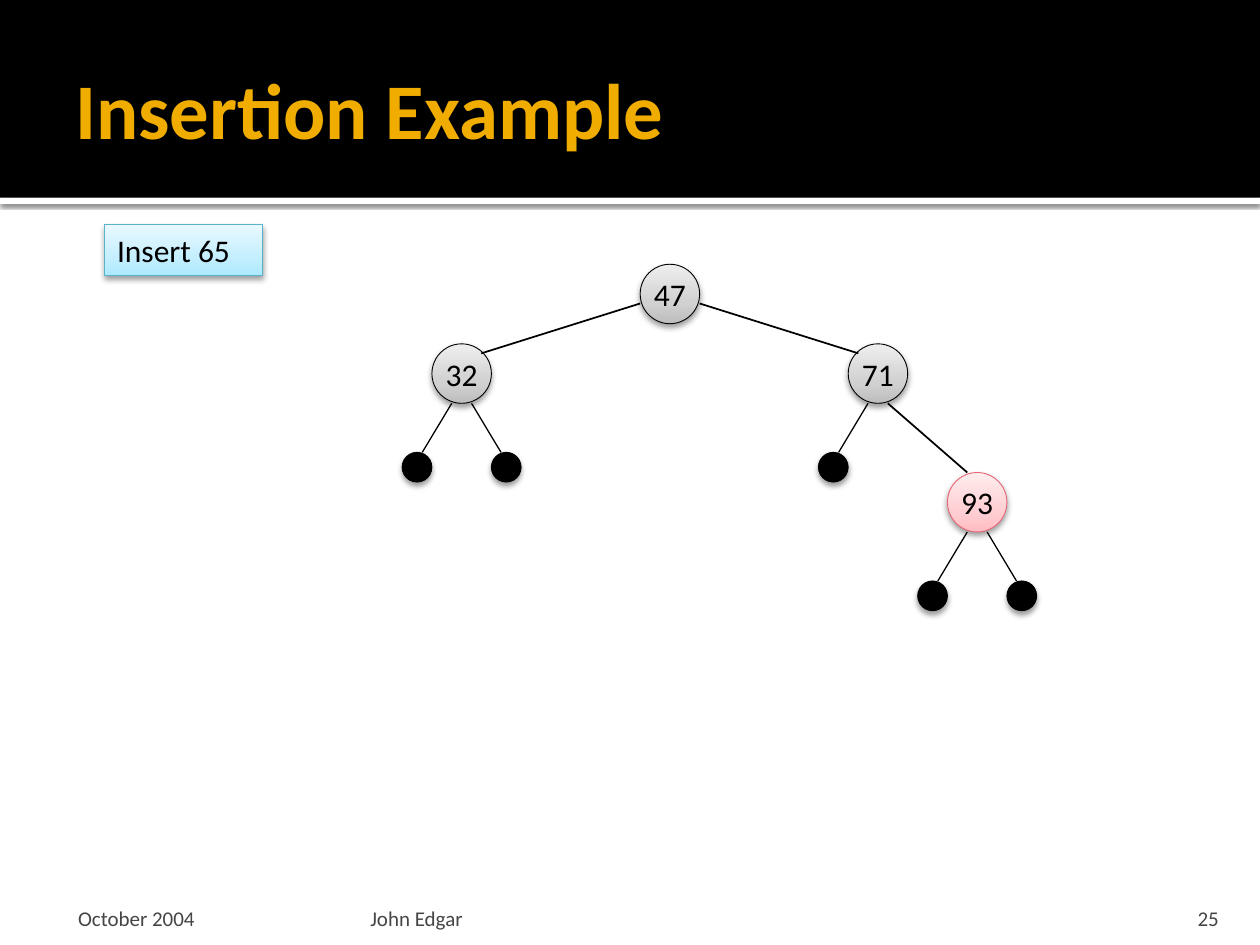
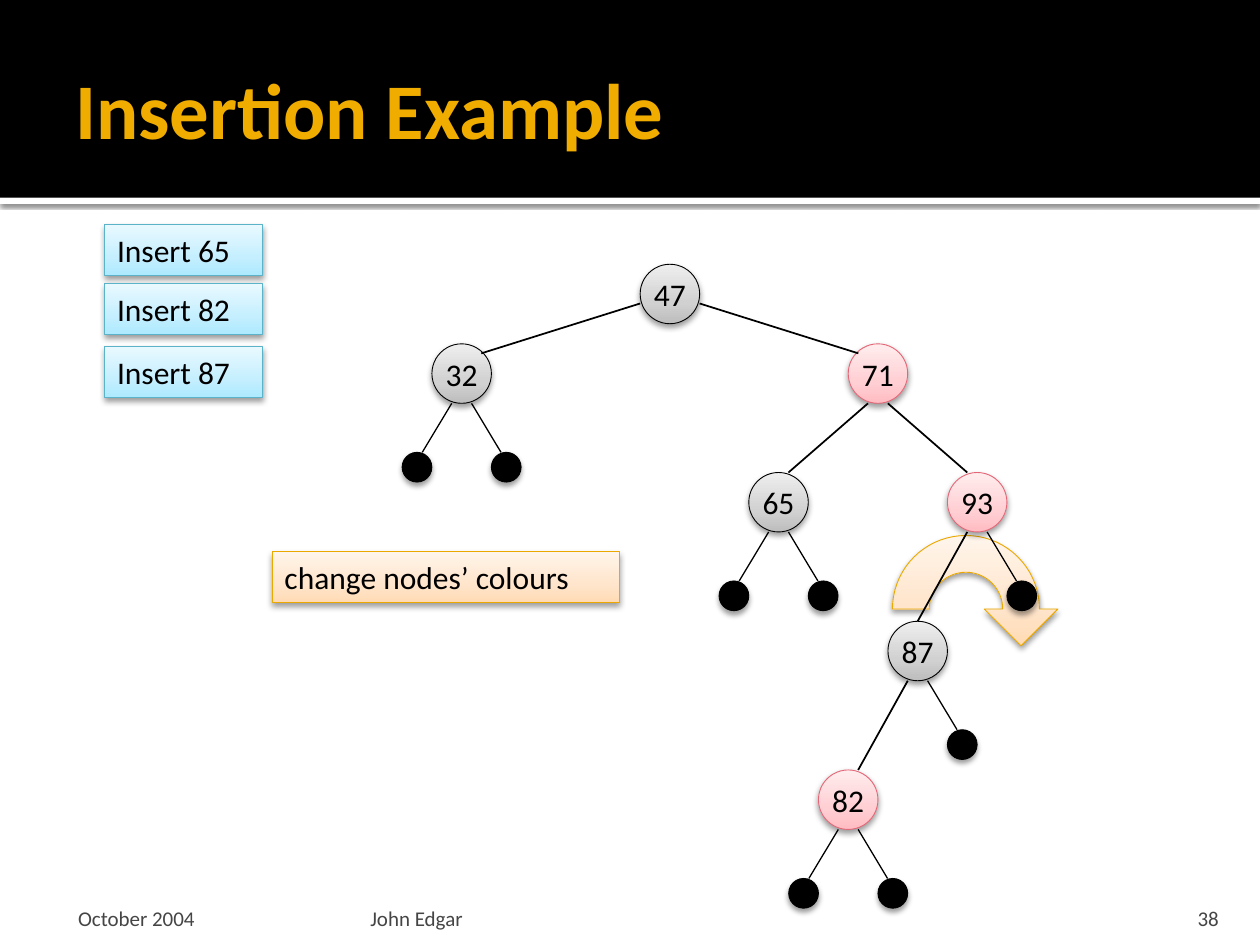
"""Build two slides that show insertion into a red-black tree."""
import math
from copy import deepcopy

from lxml import etree
from pptx import Presentation
from pptx.dml.color import RGBColor
from pptx.enum.shapes import MSO_CONNECTOR, MSO_SHAPE
from pptx.enum.text import MSO_ANCHOR, PP_ALIGN
from pptx.oxml.ns import qn
from pptx.util import Pt

RECT, OVAL = MSO_SHAPE.RECTANGLE, MSO_SHAPE.OVAL
STRAIGHT = MSO_CONNECTOR.STRAIGHT
TOP, MIDDLE, BOTTOM = MSO_ANCHOR.TOP, MSO_ANCHOR.MIDDLE, MSO_ANCHOR.BOTTOM
LEFT, CENTER, RIGHT = PP_ALIGN.LEFT, PP_ALIGN.CENTER, PP_ALIGN.RIGHT

BLACK = RGBColor(0x00, 0x00, 0x00)
WHITE = RGBColor(0xFF, 0xFF, 0xFF)
GOLD = RGBColor(0xF0, 0xAD, 0x00)
FOOTER_GREY = RGBColor(0x45, 0x45, 0x45)
BLUE_LINE = RGBColor(0x5B, 0xB3, 0xCA)
RED_LINE = RGBColor(0xE4, 0x67, 0x78)
ORANGE_LINE = RGBColor(0xEB, 0xA9, 0x00)
BLUE_SHADES = (RGBColor(0xAD, 0xE9, 0xFF), RGBColor(0xC5, 0xEF, 0xFF), RGBColor(0xE9, 0xF9, 0xFF))
GREY_SHADES = (RGBColor(0xBD, 0xBD, 0xBD), RGBColor(0xD1, 0xD1, 0xD1), RGBColor(0xEE, 0xEE, 0xEE))
RED_SHADES = (RGBColor(0xFF, 0xBC, 0xC2), RGBColor(0xFF, 0xCF, 0xD3), RGBColor(0xFF, 0xED, 0xEE))
ORANGE_SHADES = (RGBColor(0xFF, 0xDB, 0xB5), RGBColor(0xFF, 0xE5, 0xCB), RGBColor(0xFF, 0xF5, 0xEB))
BLUE = (BLUE_SHADES, BLUE_LINE)
ORANGE = (ORANGE_SHADES, ORANGE_LINE)
BLACK_NODE = (GREY_SHADES, BLACK)
RED_NODE = (RED_SHADES, RED_LINE)

FONT = "Calibri"
NODE = 34
LEAF = 17
LEAF_DROP = 62
NODE_PLACES = {
    "47": (365.8, 151), "32": (246.8, 196.5), "71": (484.7, 196.5),
    "65": (427.9, 270), "93": (541.4, 270), "87": (507.4, 355), "82": (467.7, 440),
}
LEFT_FOOT, RIGHT_FOOT = (1 / 3, 1), (2 / 3, 1)
ROOT_LEFT, ROOT_RIGHT = (0, 0.66), (1, 0.66)
LEFT_SHOULDER, RIGHT_SHOULDER = (0.17, 0.16), (0.83, 0.16)
LEFT_HEAD, MID_HEAD, RIGHT_HEAD = (1 / 3, 0), (0.5, 0), (2 / 3, 0)

ROOT_EDGES = [
    ("47", ROOT_LEFT, "32", RIGHT_SHOULDER),
    ("47", ROOT_RIGHT, "71", LEFT_SHOULDER),
    ("71", RIGHT_FOOT, "93", LEFT_HEAD),
]
LATER_EDGES = [
    ("71", LEFT_FOOT, "65", RIGHT_HEAD),
    ("93", LEFT_FOOT, "87", MID_HEAD),
    ("87", LEFT_FOOT, "82", RIGHT_HEAD),
]


def write_text(shape, text, size=18, color=BLACK, bold=False, align=LEFT,
               anchor=TOP, insets=(7.2, 3.6, 7.2, 3.6)):
    """Write one formatted paragraph into a shape."""
    frame = shape.text_frame
    frame.word_wrap = True
    frame.vertical_anchor = anchor
    frame.margin_left, frame.margin_top, frame.margin_right, frame.margin_bottom = map(Pt, insets)
    paragraph = frame.paragraphs[0]
    paragraph.alignment = align
    run = paragraph.add_run()
    run.text = text
    run.font.name, run.font.size, run.font.bold = FONT, Pt(size), bold
    run.font.color.rgb = color


def add_text(slide, box, text, **style):
    """Add a text box."""
    write_text(slide.shapes.add_textbox(*map(Pt, box)), text, **style)


def cast_shadow(shape, alpha=38, blur=3.5, distance=2):
    """Give a shape a soft shadow straight below it."""
    shape.shadow.inherit = False
    effects = shape._element.spPr.find(qn("a:effectLst"))
    shadow = etree.SubElement(effects, qn("a:outerShdw"), blurRad=str(Pt(blur)),
                              dist=str(Pt(distance)), dir="5400000", rotWithShape="0")
    color = etree.SubElement(shadow, qn("a:srgbClr"), val=str(BLACK))
    etree.SubElement(color, qn("a:alpha"), val=str(alpha * 1000))


def paint(shape, shades, outline):
    """Fill a shape with three shades from bottom to top and outline it."""
    shape.fill.gradient()
    shape.fill.gradient_angle = 90
    stops = shape._element.spPr.find(".//" + qn("a:gsLst"))
    stops.append(deepcopy(stops[0]))
    for stop, shade, position in zip(shape.fill.gradient_stops, shades, (0, 0.35, 1)):
        stop.color.rgb = shade
        stop.position = position
    shape.line.color.rgb = outline
    shape.line.width = Pt(0.5)
    cast_shadow(shape)


def add_plain(slide, kind, box, color):
    """Add a flat shape with no outline."""
    shape = slide.shapes.add_shape(kind, *map(Pt, box))
    shape.fill.solid()
    shape.fill.fore_color.rgb = color
    shape.line.fill.background()
    shape.shadow.inherit = False
    return shape


def add_line(slide, start, end, width):
    """Add a black straight line."""
    line = slide.shapes.add_connector(STRAIGHT, *map(Pt, (*start, *end)))
    line.line.color.rgb = BLACK
    line.line.width = Pt(width)
    etree.SubElement(line._element.spPr, qn("a:effectLst"))


def add_frame(slide, number):
    """Add the title band and the footer that every slide shares."""
    cast_shadow(add_plain(slide, RECT, (0, 113, 720, 3.6), WHITE), 60, 2.5, 0.8)
    add_plain(slide, RECT, (0, 0, 720, 113), BLACK)
    add_text(slide, (36, 12.2, 648, 98.6), "Insertion Example", size=45, color=GOLD,
             bold=True, anchor=MIDDLE, insets=(7.2, 3.6, 3.6, 3.6))
    footers = [
        ("October 2004", 36, 168, LEFT, (8.6, 3.6, 3.6, 0)),
        ("John Edgar", 208, 433.5, LEFT, (3.6, 3.6, 3.6, 0)),
        (number, 646, 57.6, RIGHT, (7.2, 3.6, 7.2, 0)),
    ]
    for text, left, width, align, insets in footers:
        add_text(slide, (left, 510, width, 21.6), text, size=12, color=FOOTER_GREY,
                 align=align, anchor=BOTTOM, insets=insets)


def add_label(slide, box, text, colors):
    """Add a shaded label."""
    label = slide.shapes.add_shape(RECT, *map(Pt, box))
    paint(label, *colors)
    write_text(label, text)


def add_steps(slide, keys):
    """List the inserted keys down the left side."""
    for key, top in zip(keys, (128.2, 162, 198)):
        add_label(slide, (59.8, top, 90.4, 29), f"Insert {key}", BLUE)


def add_node(slide, key, colors):
    """Add a tree node with its key."""
    node = slide.shapes.add_shape(OVAL, *map(Pt, (*NODE_PLACES[key], NODE, NODE)))
    paint(node, *colors)
    write_text(node, key, align=CENTER, anchor=MIDDLE, insets=(0, 0, 0, 0))


def point_on(key, share):
    """Return the point at a share of a node's width and height."""
    return tuple(place + NODE * part for place, part in zip(NODE_PLACES[key], share))


def add_leaf(slide, key, side):
    """Hang an empty leaf below a node, on its left (-1) or right (1)."""
    x, y = NODE_PLACES[key]
    center = x + NODE / 2
    leaf_center = center + side * 1.5 * LEAF
    add_line(slide, (center + side * NODE / 6, y + NODE),
             (leaf_center - side * 3, y + LEAF_DROP), 0.75)
    leaf = add_plain(slide, OVAL, (leaf_center - LEAF / 2, y + LEAF_DROP, LEAF, LEAF), BLACK)
    leaf.line.color.rgb = BLACK
    leaf.line.width = Pt(0.5)
    cast_shadow(leaf, blur=3.1)


def add_tree(slide, keys, red_keys, edges, leaves):
    """Draw the nodes, the edges between them and the empty leaves."""
    for key in keys:
        add_node(slide, key, RED_NODE if key in red_keys else BLACK_NODE)
    for parent, start, child, end in edges:
        add_line(slide, point_on(parent, start), point_on(child, end), 1)
    for key, sides in leaves.items():
        for side in sides:
            add_leaf(slide, key, side)


def add_rotation_arrow(slide, left, top, radius):
    """Draw a half-ring arrow that turns clockwise and points down."""
    inner = radius / 2
    center_x, base = left + radius, top + radius
    angles = [math.radians(degree) for degree in range(0, 181, 5)]

    def arc(size, turns):
        """Return the points of a half circle."""
        return [(center_x + size * math.cos(turn), base - size * math.sin(turn)) for turn in turns]

    middle = center_x + (radius + inner) / 2
    head = [(middle + inner, base), (middle, base + inner), (middle - inner, base)]
    outline = arc(inner, angles) + arc(radius, reversed(angles)) + head
    points = [(Pt(x), Pt(y)) for x, y in outline]
    builder = slide.shapes.build_freeform(*points[0])
    builder.add_line_segments(points[1:], close=True)
    paint(builder.convert_to_shape(), *ORANGE)


def build_first_insert(slide):
    """Show the tree before 65 is inserted."""
    add_frame(slide, "25")
    add_steps(slide, ["65"])
    add_tree(slide, ["47", "71", "32", "93"], ["93"], ROOT_EDGES,
             {"32": (-1, 1), "71": (-1,), "93": (-1, 1)})


def build_recolouring(slide):
    """Show the colour change and rotation after 87 is inserted."""
    add_frame(slide, "38")
    add_rotation_arrow(slide, 510, 306, 42)
    add_tree(slide, NODE_PLACES, ["71", "93", "82"], ROOT_EDGES + LATER_EDGES,
             {"32": (-1, 1), "65": (-1, 1), "93": (1,), "87": (1,), "82": (-1, 1)})
    add_label(slide, (155.5, 315.3, 198.3, 29), "change nodes’ colours", ORANGE)
    add_steps(slide, ["65", "82", "87"])


def main():
    """Build and save the presentation."""
    deck = Presentation()
    deck.slide_width, deck.slide_height = Pt(720), Pt(540)
    for build in (build_first_insert, build_recolouring):
        build(deck.slides.add_slide(deck.slide_layouts[6]))
    deck.save("out.pptx")


if __name__ == "__main__":
    main()
